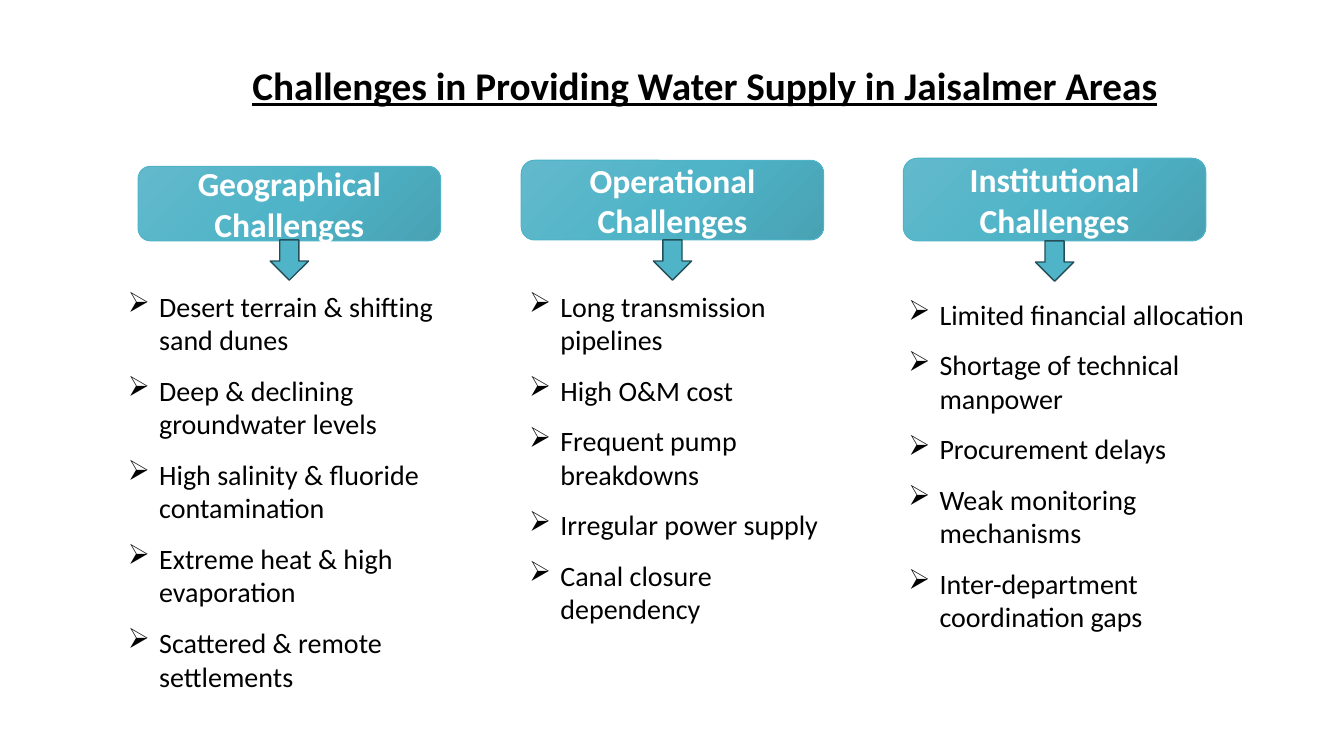
from lxml.etree import SubElement as Sub
from pptx import Presentation
from pptx.dml.color import RGBColor as Rgb
from pptx.enum.shapes import MSO_SHAPE as Kind
from pptx.enum.text import MSO_ANCHOR as Anchor
from pptx.enum.text import MSO_AUTO_SIZE as Auto
from pptx.enum.text import PP_ALIGN as Align
from pptx.oxml.ns import qn
from pptx.util import Inches, Pt

HEX = {
    "ink": "000000", "white": "FFFFFF", "teal": "50B4C8",
    "light": "61B9CB", "deep": "48A2B4", "edge": "234F58",
}
FORMATS = {
    "title": {"size": Pt(28), "bold": True, "underline": True},
    "head": {"size": Pt(24), "bold": True},
    "item": {"size": Pt(20)},
}
SHADES = [(0, "light"), (50, "teal"), (100, "deep")]
GROUPS = [
    ("Geographical Challenges", (1.37, 1.65, 3, 0.74), 2.38, (0.67, 2.82, 4.12, 4.14), [
        "Desert terrain & shifting sand dunes",
        "Deep & declining groundwater levels",
        "High salinity & fluoride contamination",
        "Extreme heat & high evaporation",
        "Scattered & remote settlements",
    ]),
    ("Operational Challenges", (5.17, 1.59, 3, 0.79), 2.38, (4.65, 2.82, 3.84, 3.47), [
        "Long transmission pipelines",
        "High O&M cost",
        "Frequent pump breakdowns",
        "Irregular power supply",
        "Canal closure dependency",
    ]),
    ("Institutional Challenges", (8.96, 1.57, 3, 0.82), 2.39, (8.41, 2.9, 4.35, 3.47), [
        "Limited financial allocation",
        "Shortage of technical manpower",
        "Procurement delays",
        "Weak monitoring mechanisms",
        "Inter-department coordination gaps",
    ]),
]


def write(para, text, role, color):
    """Put styled text into a paragraph."""
    run = para.add_run()
    run.text = text
    run.font.name = "Calibri"
    run.font.color.rgb = Rgb.from_string(HEX[color])
    for key, value in FORMATS[role].items():
        setattr(run.font, key, value)


def add_form(slide, kind, box, edge, width):
    """Add a preset shape with a thin outline and no shadow."""
    form = slide.shapes.add_shape(kind, *map(Inches, box))
    form.shadow.inherit = False
    form.line.color.rgb = Rgb.from_string(HEX[edge])
    form.line.width = Pt(width)
    return form


def add_box(slide, box, wrap):
    """Add a text box and return its frame."""
    frame = slide.shapes.add_textbox(*map(Inches, box)).text_frame
    frame.word_wrap = wrap
    frame.auto_size = Auto.SHAPE_TO_FIT_TEXT
    return frame


def add_title(slide, text):
    """Add the underlined slide title."""
    para = add_box(slide, (1.76, 0.56, 10.46, 0.57), False).paragraphs[0]
    para.alignment = Align.CENTER
    write(para, text, "title", "ink")


def add_head(slide, text, box):
    """Add a rounded header with a diagonal gradient."""
    head = add_form(slide, Kind.ROUNDED_RECTANGLE, box, "teal", 0.75)
    head.fill.gradient()
    head.fill.gradient_angle = 315
    stops = head.fill._xPr.find(".//" + qn("a:gsLst"))
    stops.clear()
    for place, shade in SHADES:
        stop = Sub(stops, qn("a:gs"), pos=str(place * 1000))
        Sub(stop, qn("a:srgbClr"), val=HEX[shade])
    frame = head.text_frame
    frame.word_wrap = True
    frame.vertical_anchor = Anchor.MIDDLE
    para = frame.paragraphs[0]
    para.alignment = Align.CENTER
    write(para, text, "head", "white")


def add_arrow(slide, left, top):
    """Add a down arrow below a header."""
    arrow = add_form(slide, Kind.DOWN_ARROW, (left, top, 0.38, 0.4), "edge", 1)
    arrow.fill.solid()
    arrow.fill.fore_color.rgb = Rgb.from_string(HEX["teal"])


def add_list(slide, items, box):
    """Add a bulleted list with a hanging indent."""
    frame = add_box(slide, box, True)
    for index, item in enumerate(items):
        para = frame.add_paragraph() if index else frame.paragraphs[0]
        para.level = 1
        para.space_before = Pt(6 if index else 0)
        para.space_after = Pt(6)
        props = para._p.get_or_add_pPr()
        props.set("marL", str(Inches(0.81)))
        props.set("indent", str(Inches(-0.31)))
        Sub(props, qn("a:buChar"), char="➢")
        write(para, item, "item", "ink")


def main():
    """Build and save the slide."""
    deck = Presentation()
    deck.slide_width, deck.slide_height = Inches(13.33), Inches(7.5)
    slide = deck.slides.add_slide(deck.slide_layouts[6])
    add_title(slide, "Challenges in Providing Water Supply in Jaisalmer Areas")
    for name, box, top, area, items in GROUPS:
        add_head(slide, name, box)
        add_list(slide, items, area)
        add_arrow(slide, box[0] + (box[2] - 0.38) / 2, top)
    deck.save("out.pptx")


if __name__ == "__main__":
    main()
